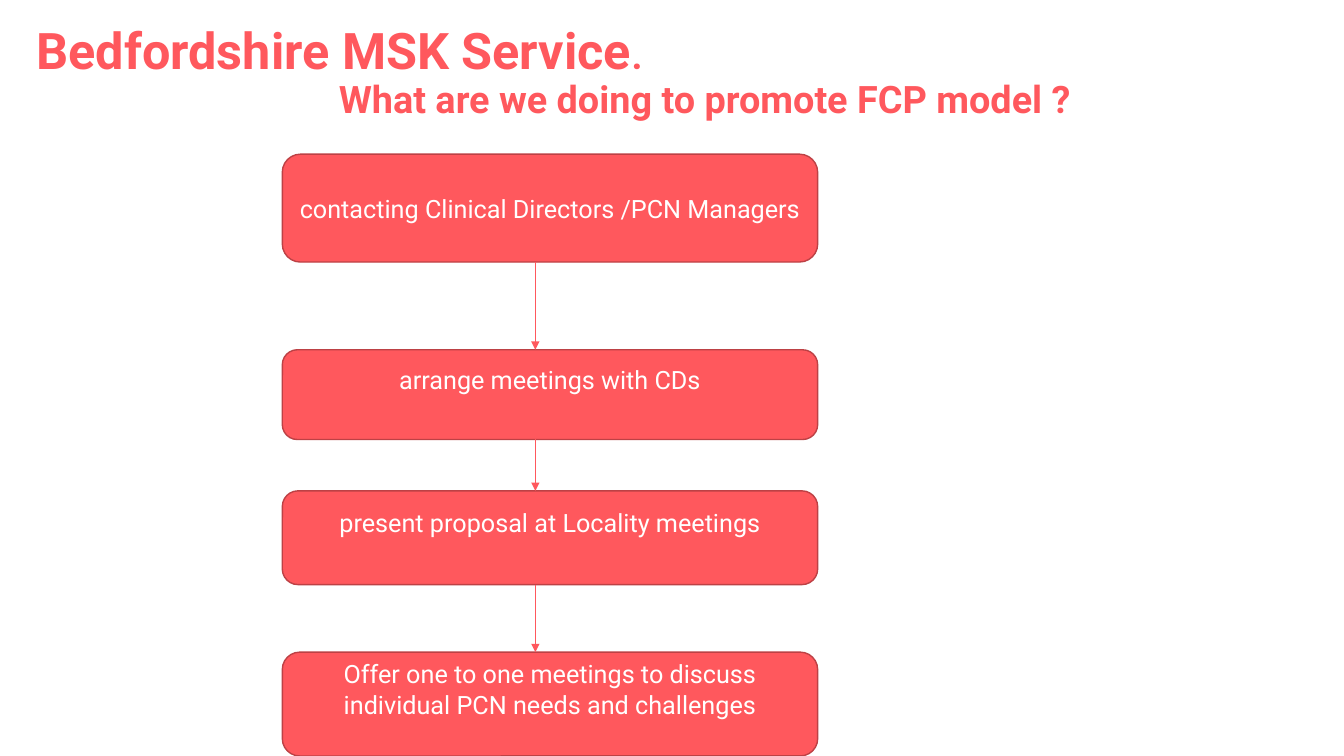
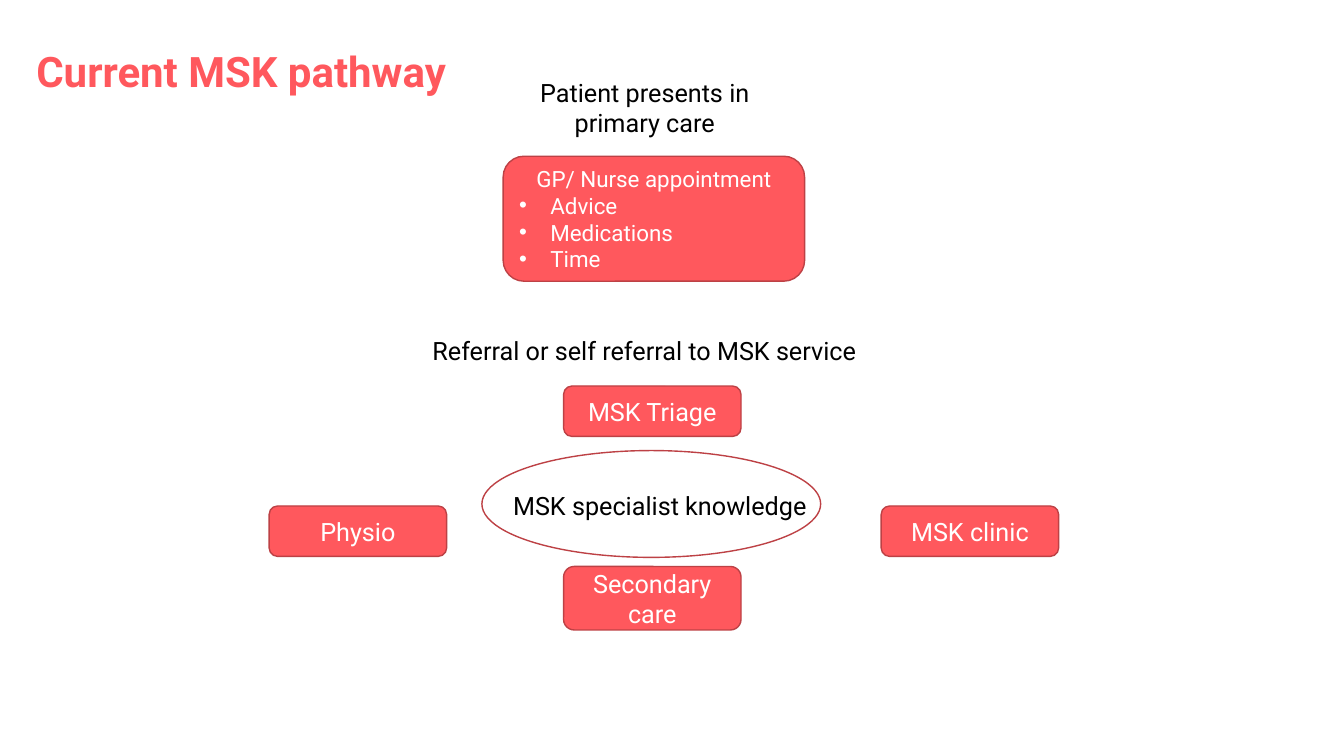
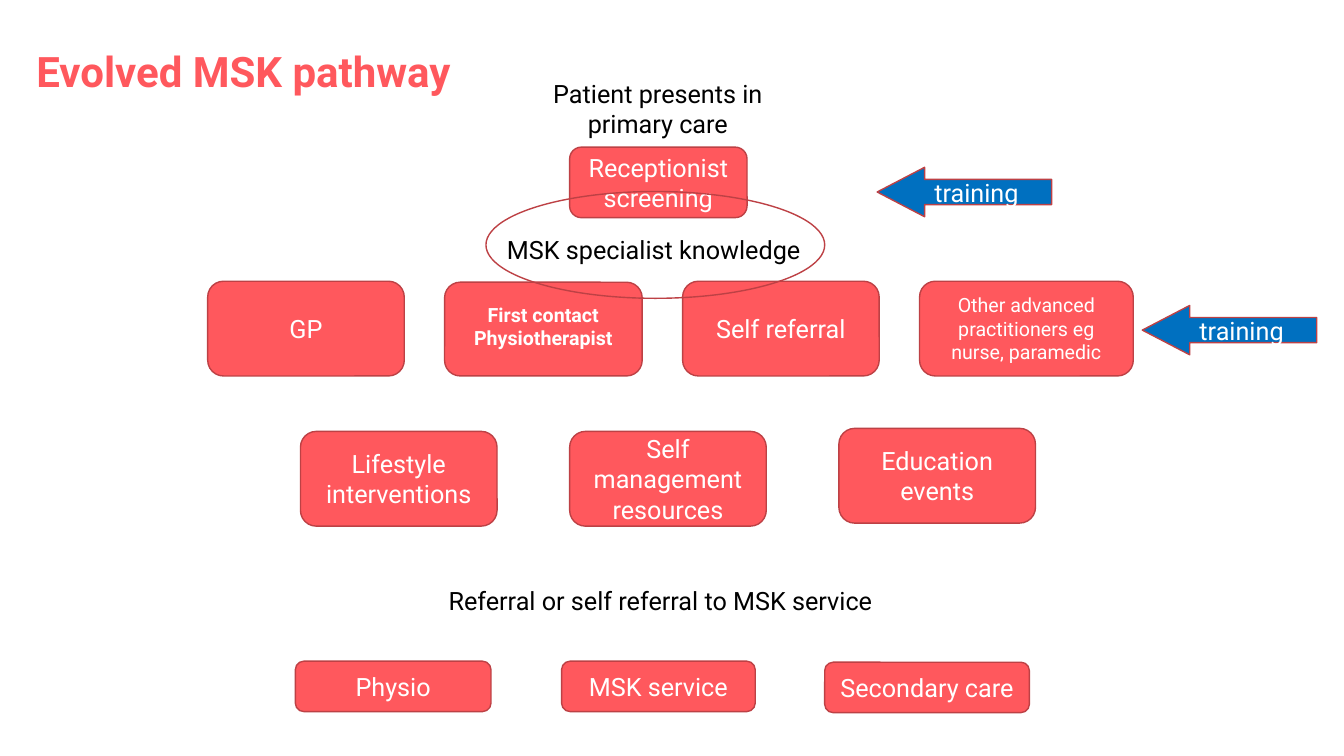
from lxml.etree import SubElement
from pptx import Presentation
from pptx.dml.color import RGBColor
from pptx.enum.shapes import MSO_CONNECTOR, MSO_SHAPE
from pptx.enum.text import MSO_ANCHOR, PP_ALIGN
from pptx.oxml.ns import qn
from pptx.util import Inches, Pt

FONT = "Roboto"
COLORS = {"coral": "FF585D", "edge": "BD4145", "blue": "0070C0",
          "white": "FFFFFF", "black": "000000"}
TITLE_AREA = (0.26, 0.27, 12.8, 0.92)
BULLET_INDENT = 0.31

# Content: titles are lines of (left indent, [(text, size), ...])
PROMOTION_TITLE = [
    (0, [("Bedfordshire MSK Service", 36), (".", 27)]),
    (3, [("What are we doing to promote FCP model ?", 27)]),
]
CURRENT_TITLE = [(0, [("Current MSK pathway", 30)])]
EVOLVED_TITLE = [(0, [("Evolved MSK pathway", 30)])]

# Steps: text, top, height, extra bottom inset
STEP_LEFT, STEP_WIDTH, ARROW_X = 2.8, 5.31, 5.31
STEPS = [
    ("contacting Clinical Directors /PCN Managers", 1.53, 1.07, 0),
    ("arrange meetings with CDs", 3.47, 0.89, 0.3),
    ("present proposal at Locality meetings", 4.87, 0.93, 0.3),
    ("Offer one to one meetings to discuss individual PCN needs and challenges",
     6.47, 1.03, 0.3),
]

PRESENTS = "Patient presents in primary care"
REFERRAL = "Referral or self referral to MSK service"
KNOWLEDGE = "MSK specialist knowledge"

# Captions: text, area, alignment
CURRENT_CAPTIONS = [
    (PRESENTS, (4.99, 0.72, 2.81, 1.01), PP_ALIGN.CENTER),
    (REFERRAL, (4.19, 3.28, 4.55, 0.4), PP_ALIGN.LEFT),
    (KNOWLEDGE, (4.99, 4.82, 3.2, 0.4), PP_ALIGN.LEFT),
]
EVOLVED_CAPTIONS = [
    (PRESENTS, (5.12, 0.73, 2.81, 1.01), PP_ALIGN.CENTER),
    (KNOWLEDGE, (4.93, 2.28, 3.2, 0.4), PP_ALIGN.LEFT),
    (REFERRAL, (4.35, 5.76, 4.55, 0.4), PP_ALIGN.LEFT),
]

# Boxes: text, area, then any text options
APPOINTMENT = ("GP/ Nurse appointment", (4.99, 1.55, 2.99, 1.24))
APPOINTMENT_POINTS = ["Advice", "Medications", "Time"]
CURRENT_BOXES = [
    ("MSK Triage", (5.59, 3.83, 1.76, 0.5), {}),
    ("Physio", (2.67, 5.02, 1.76, 0.5), {}),
    ("Secondary care", (5.59, 5.62, 1.76, 0.63), {}),
    ("MSK clinic", (8.74, 5.02, 1.76, 0.5), {}),
]
EVOLVED_BOXES = [
    ("Receptionist screening", (5.65, 1.46, 1.76, 0.7), {}),
    ("GP", (2.06, 2.79, 1.95, 0.94), {}),
    ("First contact Physiotherapist", (4.41, 2.8, 1.96, 0.93),
     {"size": 14, "bold": True, "raise_by": 0.06}),
    ("Self referral", (6.77, 2.79, 1.95, 0.94), {}),
    ("Other advanced practitioners eg nurse, paramedic",
     (9.12, 2.79, 2.12, 0.94), {"size": 14}),
    ("Lifestyle interventions", (2.98, 4.28, 1.95, 0.94), {}),
    ("Self management resources", (5.65, 4.28, 1.95, 0.94), {}),
    ("Education events", (8.32, 4.25, 1.95, 0.94), {}),
    ("Physio", (2.93, 6.56, 1.94, 0.5), {}),
    ("MSK service", (5.57, 6.56, 1.92, 0.5), {}),
    ("Secondary care", (8.18, 6.57, 2.03, 0.5), {}),
]
TRAINING_PLACES = [(8.7, 1.66), (11.33, 3.03)]
TRAINING_SIZE = (1.73, 0.49)


# Shared helpers
def color(name):
    return RGBColor.from_string(COLORS[name])


def inches(area):
    return [Inches(value) for value in area]


def add_span(para, text, size, ink, bold=False):
    span = para.add_run()
    span.text = text
    span.font.name = FONT
    span.font.size = Pt(size)
    span.font.bold = bold
    span.font.color.rgb = color(ink)


def add_page(deck, title_lines):
    page = deck.slides.add_slide(deck.slide_layouts[5])
    title = page.shapes.title
    title.left, title.top, title.width, title.height = inches(TITLE_AREA)
    frame = title.text_frame
    frame.word_wrap = True
    frame.vertical_anchor = MSO_ANCHOR.MIDDLE
    for number, (indent, spans) in enumerate(title_lines):
        para = frame.add_paragraph() if number else frame.paragraphs[0]
        para.alignment = PP_ALIGN.LEFT
        para.line_spacing = 0.9
        para.space_before = Pt(0)
        para._p.get_or_add_pPr().set("marL", str(Inches(indent)))
        for text, size in spans:
            add_span(para, text, size, "coral", bold=True)
    return page


def add_figure(page, preset, area, fill=None):
    figure = page.shapes.add_shape(preset, *inches(area))
    figure.shadow.inherit = False
    if fill:
        figure.fill.solid()
        figure.fill.fore_color.rgb = color(fill)
    else:
        figure.fill.background()
    figure.line.color.rgb = color("edge")
    figure.line.width = Pt(1)
    return figure


def add_box(page, text, area, preset=MSO_SHAPE.ROUNDED_RECTANGLE,
            fill="coral", size=18, bold=False, raise_by=0):
    box = add_figure(page, preset, area, fill)
    frame = box.text_frame
    frame.word_wrap = True
    frame.vertical_anchor = MSO_ANCHOR.MIDDLE
    frame.margin_bottom = Inches(0.05 + raise_by)
    para = frame.paragraphs[0]
    para.alignment = PP_ALIGN.CENTER
    add_span(para, text, size, "white", bold)
    return box


def add_bullet(frame, text, size):
    para = frame.add_paragraph()
    para.alignment = PP_ALIGN.LEFT
    properties = para._p.get_or_add_pPr()
    properties.set("marL", str(Inches(BULLET_INDENT)))
    properties.set("indent", str(-Inches(BULLET_INDENT)))
    SubElement(properties, qn("a:buFont")).set("typeface", "Arial")
    SubElement(properties, qn("a:buChar")).set("char", "•")
    add_span(para, text, size, "white")


def add_caption(page, text, area, alignment):
    frame = page.shapes.add_textbox(*inches(area)).text_frame
    frame.word_wrap = True
    para = frame.paragraphs[0]
    para.alignment = alignment
    add_span(para, text, 18, "black")


def add_arrow(page, x, top, bottom):
    arrow = page.shapes.add_connector(
        MSO_CONNECTOR.STRAIGHT, *inches((x, top, x, bottom)))
    arrow.line.color.rgb = color("coral")
    arrow.line.width = Pt(0.5)
    SubElement(arrow.line._get_or_add_ln(), qn("a:tailEnd")).set("type", "triangle")
    SubElement(arrow._element.spPr, qn("a:effectLst"))


def add_pathway(page, captions, boxes, ellipse_area):
    for caption in captions:
        add_caption(page, *caption)
    for text, area, options in boxes:
        add_box(page, text, area, **options)
    add_figure(page, MSO_SHAPE.OVAL, ellipse_area)


# Slides
def build_promotion(deck):
    page = add_page(deck, PROMOTION_TITLE)
    for text, top, height, raise_by in STEPS:
        add_box(page, text, (STEP_LEFT, top, STEP_WIDTH, height), raise_by=raise_by)
    for (_, top, height, _), (_, next_top, _, _) in zip(STEPS, STEPS[1:]):
        add_arrow(page, ARROW_X, top + height, next_top)


def build_current(deck):
    page = add_page(deck, CURRENT_TITLE)
    appointment = add_box(page, *APPOINTMENT, size=16)
    for point in APPOINTMENT_POINTS:
        add_bullet(appointment.text_frame, point, 16)
    add_pathway(page, CURRENT_CAPTIONS, CURRENT_BOXES, (4.78, 4.47, 3.36, 1.06))


def build_evolved(deck):
    page = add_page(deck, EVOLVED_TITLE)
    for place in TRAINING_PLACES:
        arrow = add_box(page, "training", place + TRAINING_SIZE,
                        MSO_SHAPE.LEFT_ARROW, "blue")
        arrow.adjustments[0] = 0.51
        arrow.adjustments[1] = 0.96
    add_pathway(page, EVOLVED_CAPTIONS, EVOLVED_BOXES, (4.82, 1.9, 3.36, 1.06))


def main():
    deck = Presentation()
    deck.slide_width = Inches(13.33)
    deck.slide_height = Inches(7.5)
    build_promotion(deck)
    build_current(deck)
    build_evolved(deck)
    deck.save("out.pptx")


if __name__ == "__main__":
    main()
